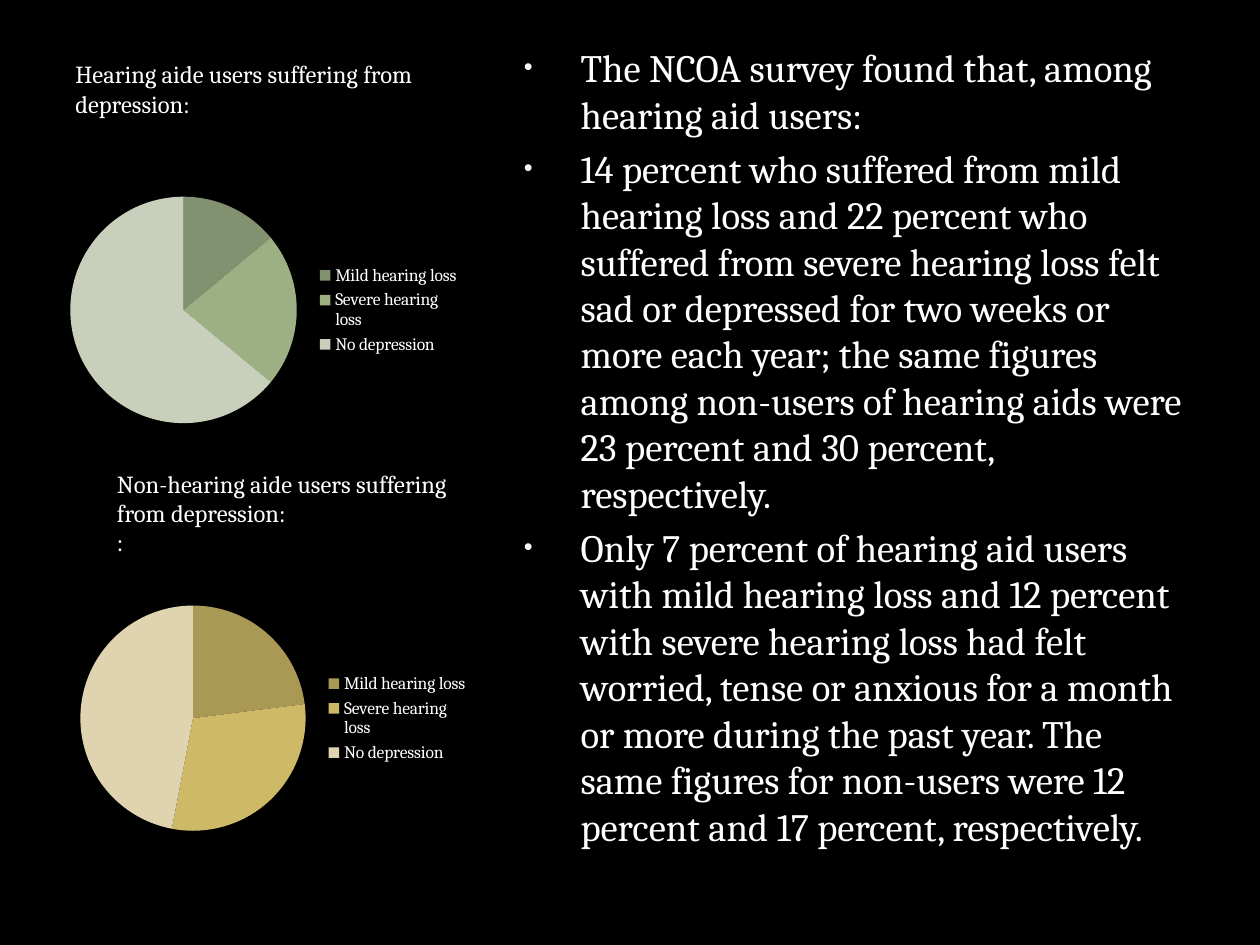
from lxml.etree import SubElement
from pptx import Presentation
from pptx.chart.data import CategoryChartData
from pptx.dml.color import RGBColor
from pptx.enum.chart import XL_CHART_TYPE, XL_LEGEND_POSITION
from pptx.oxml.ns import qn
from pptx.util import Inches, Pt

HUES = {
    "back": "000000", "text": "FFFFFF", "dot": "F9F9F9",
    "green": ["82916F", "9CB084", "C8D0BC"],
    "gold": ["AA9955", "CEB966", "E0D4B0"],
}
CATS = ["Mild hearing loss", "Severe hearing loss", "No depression"]
FACTS = [
    "The NCOA survey found that, among hearing aid users:",
    "14 percent who suffered from mild hearing loss and 22 percent who suffered from severe "
    "hearing loss felt sad or depressed for two weeks or more each year; the same figures among "
    "non-users of hearing aids were 23 percent and 30 percent, respectively.",
    "Only 7 percent of hearing aid users with mild hearing loss and 12 percent with severe "
    "hearing loss had felt worried, tense or anxious for a month or more during the past year. "
    "The same figures for non-users were 12 percent and 17 percent, respectively.",
]


def paint(fill, hue):
    fill.solid()
    fill.fore_color.rgb = RGBColor.from_string(hue)


def style(font, size):
    for key, val in {"name": "Cambria", "size": Pt(size)}.items():
        setattr(font, key, val)
    font.color.rgb = RGBColor.from_string(HUES["text"])


def add_dot(para):
    props = para._p.get_or_add_pPr()
    for key, val in {"marL": Inches(0.6), "indent": Inches(-0.45)}.items():
        props.set(key, str(int(val)))
    tint = SubElement(props, qn("a:buClr"))
    SubElement(tint, qn("a:srgbClr"), val=HUES["dot"])
    SubElement(props, qn("a:buSzPct"), val="65000")
    SubElement(props, qn("a:buFont"), typeface="Arial")
    SubElement(props, qn("a:buChar"), char="•")


def add_text(slide, box, lines, size, dots=False):
    frame = slide.shapes.add_textbox(*map(Inches, box)).text_frame
    frame.word_wrap = True
    for num, line in enumerate(lines):
        para = frame.add_paragraph() if num else frame.paragraphs[0]
        para.text = line
        if dots:
            add_dot(para)
            if num:
                para.space_before = Pt(size * 0.2)
        style(para.font, size)


def add_pie(slide, box, vals, hues):
    data = CategoryChartData()
    data.categories = CATS
    data.add_series("Series 1", vals)
    chart = slide.shapes.add_chart(XL_CHART_TYPE.PIE, *map(Inches, box), data).chart
    for key, val in {"has_title": False, "has_legend": True}.items():
        setattr(chart, key, val)
    style(chart.font, 10)
    form = {"position": XL_LEGEND_POSITION.RIGHT, "include_in_layout": False}
    for key, val in form.items():
        setattr(chart.legend, key, val)
    style(chart.legend.font, 10)
    plot = chart.plots[0]
    plot.vary_by_categories = True
    for num, hue in enumerate(hues):
        part = plot.series[0].points[num].format
        paint(part.fill, hue)
        part.line.fill.background()


def main():
    deck = Presentation()
    deck.slide_width, deck.slide_height = Inches(10), Inches(7.5)
    slide = deck.slides.add_slide(deck.slide_layouts[6])
    paint(slide.background.fill, HUES["back"])
    add_text(slide, (3.91, 0.3, 5.59, 6.4), FACTS, 22.1, dots=True)
    add_text(slide, (0.5, 0.42, 3.42, 0.6),
             ["Hearing aide users suffering from depression:"], 14)
    add_pie(slide, (0.42, 1.17, 3.33, 2.58), (14, 22, 64), HUES["green"])
    add_pie(slide, (0.5, 4.42, 3.32, 2.56), (23, 30, 47), HUES["gold"])
    add_text(slide, (0.83, 3.67, 3, 0.81),
             ["Non-hearing aide users suffering from depression:", ":"], 14)
    deck.save("out.pptx")


if __name__ == "__main__":
    main()
